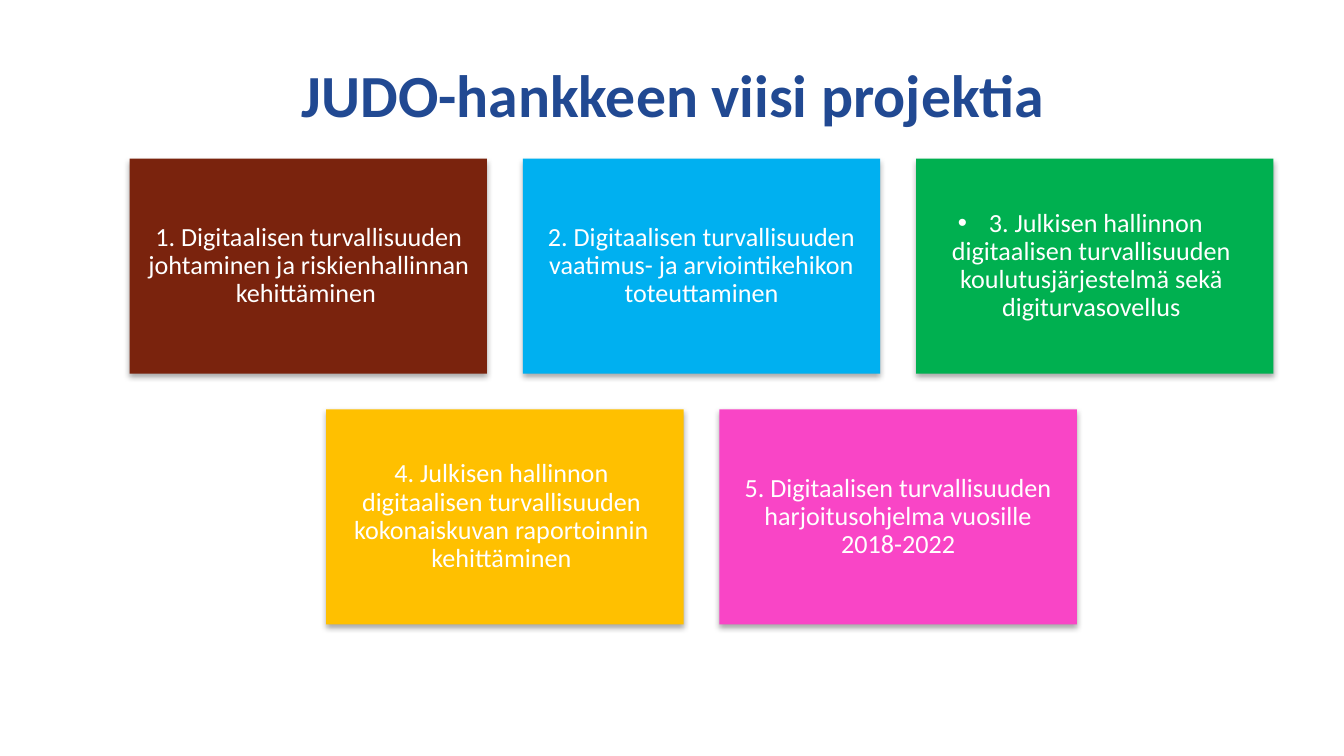
from lxml import etree
from pptx import Presentation
from pptx.dml.color import RGBColor
from pptx.enum.shapes import MSO_SHAPE as Shape
from pptx.enum.text import MSO_ANCHOR as Anchor, PP_ALIGN as Align
from pptx.oxml import parse_xml
from pptx.oxml.ns import nsdecls, qn
from pptx.util import Inches, Pt

COLORS = {"title": "214992", "text": "FFFFFF", "brown": "7A230D", "blue": "00B0F0",
          "green": "00B050", "yellow": "FFC000", "pink": "F945C6"}
TITLE = "JUDO-hankkeen viisi projektia"
# Each project: text, fill, left inset, right inset, bulleted
PROJECT_ROWS = [
    [("1. Digitaalisen turvallisuuden johtaminen ja riskienhallinnan kehittäminen ",
      "brown", 0.07, 0.06, False),
     ("2. Digitaalisen turvallisuuden vaatimus- ja arviointikehikon toteuttaminen",
      "blue", 0.06, 0.06, False),
     ("3. Julkisen hallinnon digitaalisen turvallisuuden koulutusjärjestelmä sekä "
      "digiturvasovellus", "green", 0.07, 0.12, True)],
    [("4. Julkisen hallinnon digitaalisen turvallisuuden kokonaiskuvan raportoinnin "
      "kehittäminen", "yellow", 0.07, 0.12, False),
     ("5. Digitaalisen turvallisuuden harjoitusohjelma vuosille 2018-2022",
      "pink", 0.12, 0.12, False)],
]
SLIDE_WIDTH = 10
SLIDE_HEIGHT = SLIDE_WIDTH * 9 / 16
BOX_WIDTH, BOX_HEIGHT = 2.66, 1.6
GAP = BOX_WIDTH / 10
GRID_CENTER, GRID_TOP = 5.22, 1.18
TITLE_FONT = {"name": "Calibri", "size": Pt(32), "bold": True}
PROJECT_FONT = {"name": "Calibri", "size": Pt(14), "bold": False}


def color(name):
    return RGBColor.from_string(COLORS[name])


def write_text(shape, text, font, color_name):
    frame = shape.text_frame
    frame.word_wrap = True
    frame.vertical_anchor = Anchor.MIDDLE
    paragraph = frame.paragraphs[0]
    paragraph.alignment = Align.CENTER
    run = paragraph.add_run()
    run.text = text
    for attribute, value in font.items():
        setattr(run.font, attribute, value)
    run.font.color.rgb = color(color_name)
    return paragraph


def add_soft_shadow(shape):
    shape.shadow.inherit = False
    effects = shape._element.spPr.find(qn("a:effectLst"))
    effects.append(parse_xml(
        f'<a:outerShdw {nsdecls("a")} blurRad="{Pt(3.1)}" dist="{Pt(1.8)}" '
        'dir="5400000" rotWithShape="0"><a:srgbClr val="000000">'
        '<a:alpha val="35000"/></a:srgbClr></a:outerShdw>'))


def add_bullet(paragraph):
    properties = paragraph._p.get_or_add_pPr()
    properties.set("marL", "0")
    properties.set("indent", str(-Inches(0.23)))
    etree.SubElement(properties, qn("a:buFont")).set("typeface", "Arial")
    etree.SubElement(properties, qn("a:buChar")).set("char", "•")


def add_project(slide, left, top, project):
    text, fill, inset_left, inset_right, bulleted = project
    box = slide.shapes.add_shape(Shape.RECTANGLE, Inches(left), Inches(top),
                                 Inches(BOX_WIDTH), Inches(BOX_HEIGHT))
    box.fill.solid()
    box.fill.fore_color.rgb = color(fill)
    box.line.fill.background()
    add_soft_shadow(box)
    insets = {"left": inset_left, "top": 0.06, "right": inset_right, "bottom": 0.06}
    for side, inset in insets.items():
        setattr(box.text_frame, f"margin_{side}", Inches(inset))
    paragraph = write_text(box, text, PROJECT_FONT, "text")
    paragraph.line_spacing = 0.9
    if bulleted:
        add_bullet(paragraph)


def main():
    presentation = Presentation()
    presentation.slide_width = Inches(SLIDE_WIDTH)
    presentation.slide_height = Inches(SLIDE_HEIGHT)
    slide = presentation.slides.add_slide(presentation.slide_layouts[6])

    for row, projects in enumerate(PROJECT_ROWS):
        row_width = len(projects) * (BOX_WIDTH + GAP) - GAP
        row_left = GRID_CENTER - row_width / 2
        top = GRID_TOP + row * (BOX_HEIGHT + GAP)
        for column, project in enumerate(projects):
            add_project(slide, row_left + column * (BOX_WIDTH + GAP), top, project)

    title = slide.shapes.add_textbox(Inches(0.52), Inches(0.23), Inches(8.98), Inches(0.94))
    write_text(title, TITLE, TITLE_FONT, "title")
    presentation.save("out.pptx")


if __name__ == "__main__":
    main()
